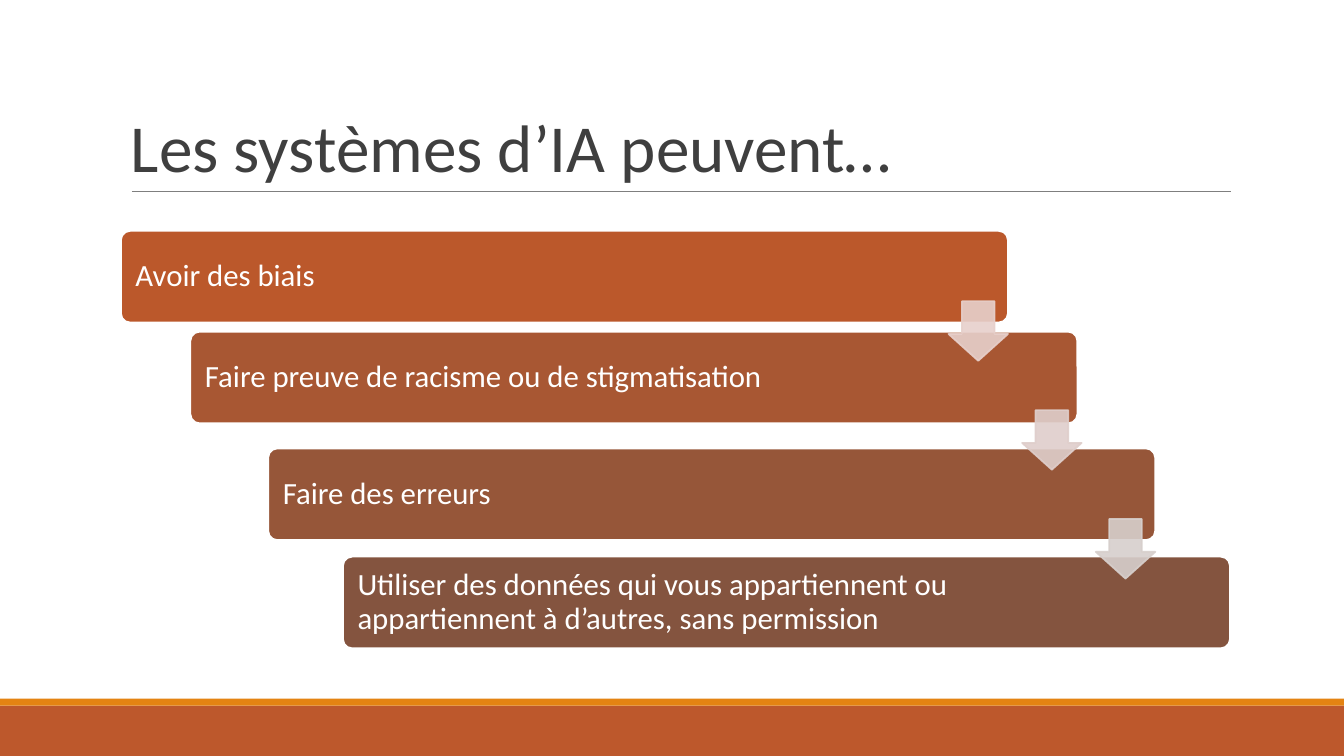
from lxml import etree
from pptx import Presentation
from pptx.dml.color import RGBColor
from pptx.enum.shapes import MSO_CONNECTOR, MSO_SHAPE
from pptx.enum.text import MSO_ANCHOR, PP_ALIGN
from pptx.oxml.ns import qn
from pptx.util import Pt

STRAIGHT = MSO_CONNECTOR.STRAIGHT
RECTANGLE = MSO_SHAPE.RECTANGLE
ROUNDED = MSO_SHAPE.ROUNDED_RECTANGLE
DOWN_ARROW = MSO_SHAPE.DOWN_ARROW
MIDDLE = MSO_ANCHOR.MIDDLE
BOTTOM = MSO_ANCHOR.BOTTOM
LEFT = PP_ALIGN.LEFT

FONT = "Calibri"
WHITE = RGBColor(0xFF, 0xFF, 0xFF)
INK = RGBColor(0x3F, 0x3F, 0x3F)
RULE_GREY = RGBColor(0x7F, 0x7F, 0x7F)
RUST = RGBColor(0xBD, 0x58, 0x2C)
ORANGE = RGBColor(0xE4, 0x83, 0x12)

SLIDE_WIDTH, SLIDE_HEIGHT = 960, 540
STEP_WIDTH, STEP_HEIGHT = 633.6, 65.5
ARROW_SIZE = 42.5
ARROW_START = (591.1, 50.3)
ARROW_PITCH = (52.6, 77.8)

STEPS = [
    ("Avoir des biais", RGBColor(0xBB, 0x58, 0x2B), 0, 0),
    ("Faire preuve de racisme ou de stigmatisation",
     RGBColor(0xA8, 0x57, 0x33), 49.6, 72),
    ("Faire des erreurs", RGBColor(0x96, 0x56, 0x39), 105.2, 155.4),
    ("Utiliser des données qui vous appartiennent ou appartiennent "
     "à d’autres, sans permission",
     RGBColor(0x84, 0x54, 0x3F), 158.6, 232.7),
]
ARROW_COLOURS = [
    RGBColor(0xE7, 0xD0, 0xCB),
    RGBColor(0xDF, 0xCE, 0xCB),
    RGBColor(0xD7, 0xCF, 0xCC),
]


def add_block(slide, preset, left, top, width, height, colour, outline=None):
    block = slide.shapes.add_shape(
        preset, Pt(left), Pt(top), Pt(width), Pt(height))
    block.shadow.inherit = False
    block.fill.solid()
    block.fill.fore_color.rgb = colour
    if outline is None:
        block.line.fill.background()
    else:
        block.line.color.rgb = outline
        block.line.width = Pt(1.25)
    return block


def write_text(frame, wording, size, colour, spacing, anchor, insets):
    frame.word_wrap = True
    frame.vertical_anchor = anchor
    (frame.margin_left, frame.margin_top,
     frame.margin_right, frame.margin_bottom) = map(Pt, insets)
    paragraph = frame.paragraphs[0]
    paragraph.text = wording
    paragraph.alignment = LEFT
    paragraph.line_spacing = spacing
    paragraph.font.name = FONT
    paragraph.font.size = Pt(size)
    paragraph.font.color.rgb = colour


def add_footer(slide, left, top, width, height):
    stripe_height = 5
    add_block(slide, RECTANGLE, left, top + stripe_height,
              width, height - stripe_height, RUST)
    add_block(slide, RECTANGLE, left, top, width, stripe_height, ORANGE)


def add_title(slide, left, top, width, height):
    bottom = top + height
    rule = slide.shapes.add_connector(
        STRAIGHT, Pt(left + 7.9), Pt(bottom), Pt(left + width + 0.7), Pt(bottom))
    rule.line.color.rgb = RULE_GREY
    rule.line.width = Pt(0.75)
    etree.SubElement(rule._element.spPr, qn("a:effectLst"))
    title = slide.shapes.add_textbox(Pt(left), Pt(top), Pt(width), Pt(height))
    write_text(title.text_frame, "Les systèmes d’IA peuvent…",
               48, INK, 0.85, BOTTOM, (7.2, 3.6, 7.2, 3.6))


def add_staircase(slide, left, top):
    for wording, colour, across, down in STEPS:
        step = add_block(slide, ROUNDED, left + across, top + down,
                         STEP_WIDTH, STEP_HEIGHT, colour, WHITE)
        step.adjustments[0] = 0.1
        write_text(step.text_frame, wording, 22, WHITE, 0.9, MIDDLE,
                   (8.5, 8.5, 104, 8.5))

    for index, colour in enumerate(ARROW_COLOURS):
        arrow = add_block(slide, DOWN_ARROW,
                          left + ARROW_START[0] + index * ARROW_PITCH[0],
                          top + ARROW_START[1] + index * ARROW_PITCH[1],
                          ARROW_SIZE, ARROW_SIZE, colour, colour)
        arrow.adjustments[0] = 0.55
        arrow.adjustments[1] = 0.45
        for paint in arrow._element.spPr.iter(qn("a:srgbClr")):
            etree.SubElement(paint, qn("a:alpha"), val="90000")


def main():
    deck = Presentation()
    deck.slide_width, deck.slide_height = Pt(SLIDE_WIDTH), Pt(SLIDE_HEIGHT)
    slide = deck.slides.add_slide(deck.slide_layouts[6])
    add_footer(slide, 0, 499, SLIDE_WIDTH, 41)
    add_title(slide, 86.4, 22.5, 792, 114.3)
    add_staircase(slide, 86.4, 164.9)
    deck.save("out.pptx")


if __name__ == "__main__":
    main()
